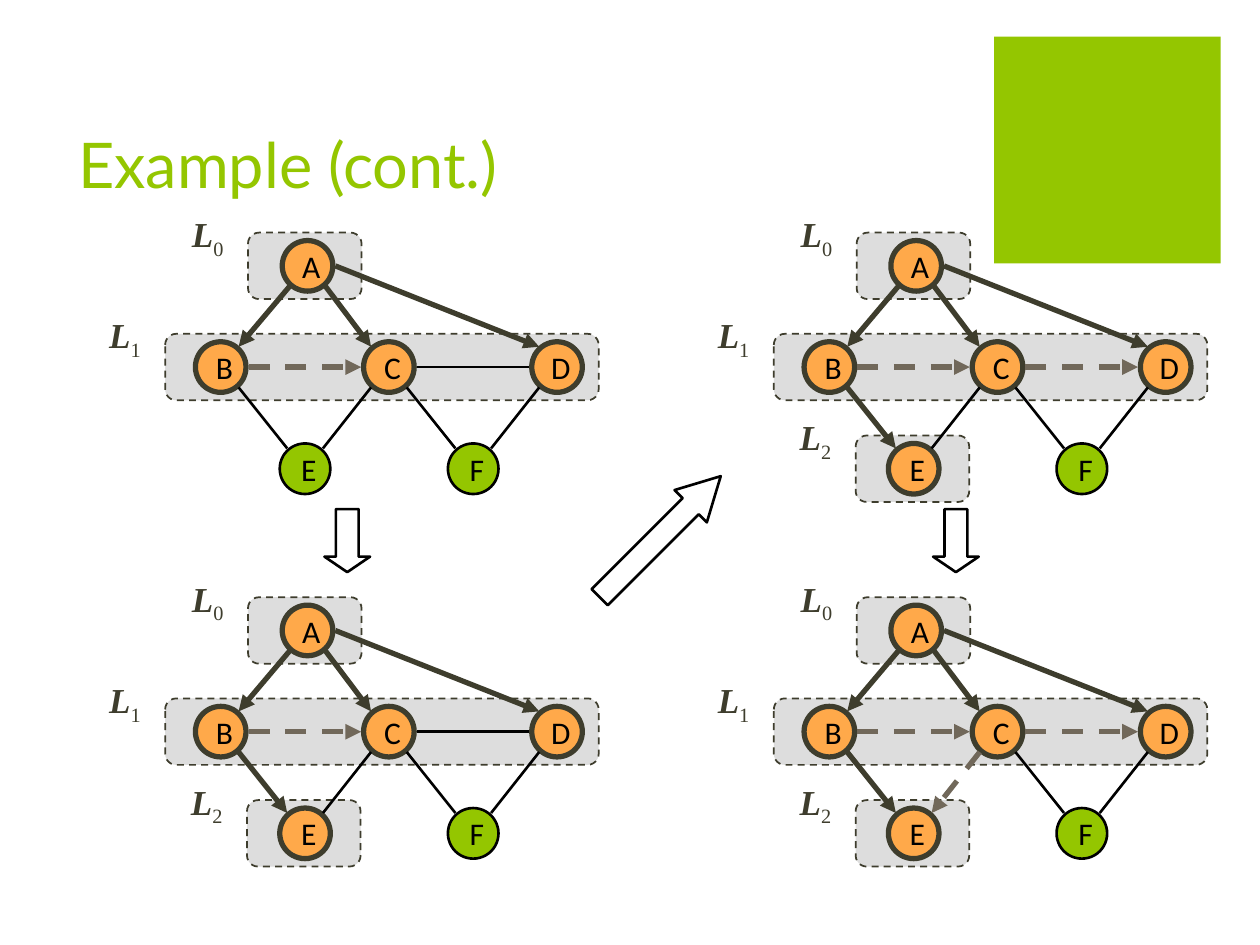
import dataclasses

import lxml.etree
import pptx
import pptx.dml.color
import pptx.enum.dml
import pptx.enum.shapes
import pptx.enum.text
import pptx.oxml.ns
import pptx.util

Cm = pptx.util.Cm
Kind = pptx.enum.shapes.MSO_SHAPE
Align = pptx.enum.text.PP_ALIGN
Anchor = pptx.enum.text.MSO_ANCHOR


@dataclasses.dataclass(frozen=True)
class Theme:
    green: str = "94C600"
    orange: str = "FFA94A"
    dark: str = "3E3D2D"
    brown: str = "71685A"
    gray: str = "DDDDDD"
    black: str = "000000"
    head: str = "Lato"
    body: str = "Calibri"
    serif: str = "Times New Roman"
    big: int = 36
    mid: int = 20
    small: int = 18
    thick: float = 3
    thin: float = 1.5
    fine: float = 1


def color(code):
    return pptx.dml.color.RGBColor.from_string(code)


def write(par, text, font, size, ink, bold=False, slant=False, sub=False):
    """Add one run of text to a paragraph."""
    run = par.add_run()
    run.text = text
    run.font.name = font
    run.font.size = pptx.util.Pt(size)
    run.font.color.rgb = color(ink)
    run.font.bold = bold
    run.font.italic = slant
    if sub:
        run.font._element.set("baseline", "-25000")


class Maker:
    """Holds the style, the slide and the shapes being added to."""

    def __init__(self, theme, slide):
        self.theme = theme
        self.slide = slide
        self.shapes = slide.shapes

    def group(self):
        self.shapes = self.slide.shapes.add_group_shape().shapes

    def title(self, text, left, top, width, height):
        t = self.theme
        box = self.slide.shapes.title
        box.left, box.top, box.width, box.height = map(Cm, (left, top, width, height))
        box.text_frame.vertical_anchor = Anchor.BOTTOM
        par = box.text_frame.paragraphs[0]
        par.alignment = Align.LEFT
        write(par, text, font=t.head, size=t.big, ink=t.green)

    def stroke(self, line, ink, width, dash=False):
        line.color.rgb = color(ink)
        line.width = pptx.util.Pt(width)
        if dash:
            line.dash_style = pptx.enum.dml.MSO_LINE.DASH

    def shape(self, kind, left, top, width, height, fill=None, line=None):
        item = self.shapes.add_shape(kind, *map(Cm, (left, top, width, height)))
        item.shadow.inherit = False
        if fill:
            item.fill.solid()
            item.fill.fore_color.rgb = color(fill)
        else:
            item.fill.background()
        if line:
            self.stroke(item.line, *line)
        else:
            item.line.fill.background()
        return item

    def arrow(self, x, y, length, turn, head):
        """Block arrow centred on x, y."""
        t = self.theme
        item = self.shape(Kind.RIGHT_ARROW, x - length / 2, y - 0.46, length, 0.92,
                          line=(t.black, t.thin))
        item.adjustments[1] = head
        item.rotation = turn

    def node(self, name, x, y, seen):
        t = self.theme
        fill = t.orange if seen else t.green
        line = (t.dark, t.thick) if seen else (t.black, t.thin)
        item = self.shape(Kind.OVAL, x - SIZE / 2, y - SIZE / 2, SIZE, SIZE, fill, line)
        frame = item.text_frame
        frame.word_wrap = False
        frame.margin_left = Cm(0.15)
        frame.margin_right = frame.margin_top = frame.margin_bottom = 0
        frame.vertical_anchor = Anchor.MIDDLE
        par = frame.paragraphs[0]
        par.alignment = Align.CENTER
        write(par, name, font=t.body, size=t.small, ink=t.black)

    def edge(self, start, end, kind):
        t = self.theme
        ink, width, dash, tip = {
            "plain": (t.black, t.thin, False, False),
            "tree": (t.dark, t.thick, False, True),
            "cross": (t.brown, t.thick, True, True),
        }[kind]
        item = self.shapes.add_connector(
            pptx.enum.shapes.MSO_CONNECTOR.STRAIGHT, *map(Cm, start + end))
        self.stroke(item.line, ink, width, dash)
        props = item._element.spPr
        if tip:
            lxml.etree.SubElement(props.get_or_add_ln(),
                                  pptx.oxml.ns.qn("a:tailEnd"), type="triangle")
        lxml.etree.SubElement(props, pptx.oxml.ns.qn("a:effectLst"))

    def band(self, left, y, width):
        t = self.theme
        self.shape(Kind.ROUNDED_RECTANGLE, left, y - 0.67, width, 1.34,
                   t.gray, (t.dark, t.fine, True))

    def label(self, level, left, top):
        t = self.theme
        box = self.shapes.add_textbox(*map(Cm, (left, top, 1.3, 1.1)))
        box.text_frame.word_wrap = True
        par = box.text_frame.paragraphs[0]
        look = dict(font=t.serif, size=t.mid, ink=t.dark)
        write(par, "L", bold=True, slant=True, **look)
        write(par, str(level), sub=True, **look)


# Graph layout, in centimetres, for the top left panel
SIZE = 1.02
STEP = 3.39
ROWS = [5.36, 7.4, 9.45]
NODES = {"C": (4.45 + STEP, ROWS[1]), "B": (4.45, ROWS[1]), "A": (6.2, ROWS[0]),
         "E": (6.15, ROWS[2]), "D": (4.45 + 2 * STEP, ROWS[1]),
         "F": (6.15 + STEP, ROWS[2])}
BANDS = [(5, 2.29), (3.33, 8.74), (4.98, 2.29)]
EDGES = ["AB", "BE", "CE", "AC", "BC", "DF", "AD", "CD", "CF"]
TREE = {"AB", "AC", "AD"}
RIGHT, DOWN = 12.27, 7.35

# Column, row, tree edges and cross edges of each step
STEPS = [
    (0, 0, TREE, {"BC"}),
    (0, 1, TREE | {"BE"}, {"BC"}),
    (1, 0, TREE | {"BE"}, {"BC", "CD"}),
    (1, 1, TREE | {"BE"}, {"BC", "CD", "CE"}),
]


def ends(a, b):
    """Points on the rims of two nodes where their edge starts and stops."""
    dx, dy = b[0] - a[0], b[1] - a[1]
    side = 1 if dx > 0 else -1
    flat, slant = (0.56 * side, 0), (0.36 * side, 0.41)
    out = flat if abs(dx) > 2 * dy else slant
    back = slant if dy > 0.1 else flat
    return (a[0] + out[0], a[1] + out[1]), (b[0] - back[0], b[1] - back[1])


def panel(make, col, row, tree, cross):
    dx, dy = col * RIGHT, row * DOWN
    spots = {name: (x + dx, y + dy) for name, (x, y) in NODES.items()}
    seen = set("A").union(*tree)
    levels = range(3 if "E" in seen else 2)
    make.group()
    for level in reversed(levels):
        left, width = BANDS[level]
        make.band(left + dx, ROWS[level] + dy, width)
    for name, (x, y) in spots.items():
        make.node(name, x, y, name in seen)
    for pair in EDGES:
        kind = "tree" if pair in tree else "cross" if pair in cross else "plain"
        make.edge(*ends(spots[pair[0]], spots[pair[1]]), kind)
    for level in levels:
        make.label(level, BANDS[level][0] + dx - 1.38, ROWS[level] + dy - 1.2)


def main():
    deck = pptx.Presentation()
    deck.slide_width, deck.slide_height = Cm(25.4), Cm(19.05)
    theme = Theme()
    make = Maker(theme, deck.slides.add_slide(deck.slide_layouts[5]))

    # Corner square and title
    make.shape(Kind.RECTANGLE, 20.04, 0.74, 4.57, 4.57, theme.green)
    make.title("Example (cont.)", 1.32, 1.02, 18.08, 3.17)

    # Arrows from step to step
    for x in (7, 7 + RIGHT):
        make.arrow(x, 10.9, 1.27, 90, 0.34)
    make.arrow(13.31, 10.82, 3.45, -45, 0.93)

    # The four steps of the search
    for step in STEPS:
        panel(make, *step)
    deck.save("out.pptx")


if __name__ == "__main__":
    main()
